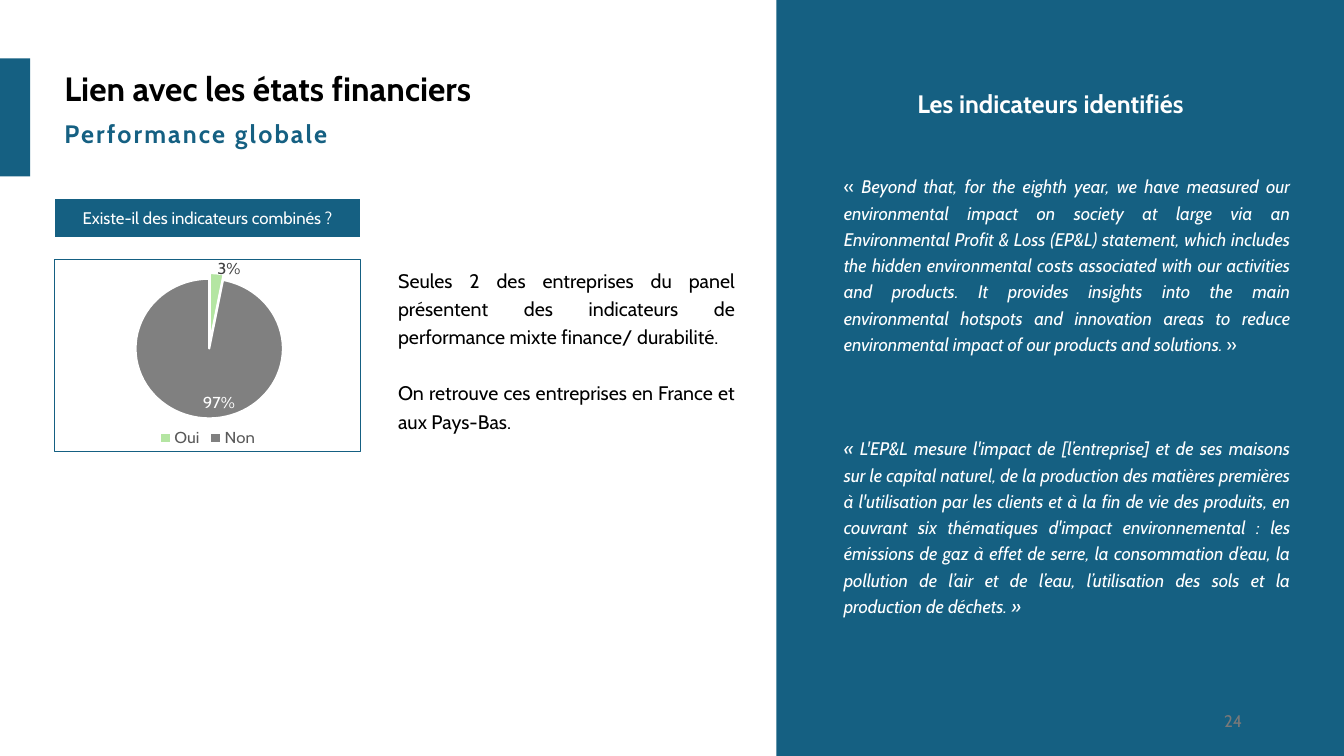
from dataclasses import dataclass

from lxml.etree import SubElement
from pptx import Presentation
from pptx.chart.data import CategoryChartData
from pptx.dml.color import RGBColor
from pptx.enum.chart import XL_CHART_TYPE, XL_LABEL_POSITION, XL_LEGEND_POSITION
from pptx.enum.shapes import MSO_SHAPE
from pptx.enum.text import MSO_ANCHOR, PP_ALIGN
from pptx.oxml import parse_xml
from pptx.oxml.ns import nsdecls, qn
from pptx.util import Inches, Pt


@dataclass(frozen=True)
class Theme:
    font: str = "Cabin"
    blue: str = "156082"
    white: str = "FFFFFF"
    black: str = "000000"
    green: str = "B4E5A2"
    gray: str = "808080"
    page: str = "797979"
    label: str = "404040"
    legend: str = "595959"
    title: int = 24
    head: int = 18
    body: int = 14
    quote: int = 13
    small: int = 12


T = Theme()


def style(font, size, color, bold=False, italic=False):
    font.name = T.font
    font.size = Pt(size)
    font.color.rgb = RGBColor.from_string(color)
    font.bold = bold
    font.italic = italic


def write(frame, text, size=T.body, color=T.black, bold=False, italic=False,
          align=PP_ALIGN.LEFT, anchor=MSO_ANCHOR.TOP, lead=None, gap=0, track=0):
    """Fill a frame; text is a list of paragraphs, each a string or (text, italic) runs."""
    frame.word_wrap = True
    frame.vertical_anchor = anchor
    for i, part in enumerate([text] if isinstance(text, str) else text):
        para = frame.add_paragraph() if i else frame.paragraphs[0]
        para.alignment = align
        if lead:
            para.line_spacing = lead
        if i and gap:
            para.space_before = Pt(gap)
        for words, slant in [(part, italic)] if isinstance(part, str) else part:
            run = para.add_run()
            run.text = words
            style(run.font, size, color, bold, slant)
            if track:
                run.font._element.set("spc", str(track))


def add_text(slide, box, text, **form):
    write(slide.shapes.add_textbox(*map(Inches, box)).text_frame, text, **form)


def add_rect(slide, box, line=None):
    rect = slide.shapes.add_shape(MSO_SHAPE.RECTANGLE, *map(Inches, box))
    rect.shadow.inherit = False
    rect.fill.solid()
    rect.fill.fore_color.rgb = RGBColor.from_string(T.blue)
    if line:
        rect.line.color.rgb = RGBColor.from_string(line)
        rect.line.width = Pt(1.5)
    else:
        rect.line.fill.background()
    return rect


def add_head(slide, x, y):
    # Side tab, title and subtitle
    add_rect(slide, (x, y, 0.3, 1.17))
    add_text(slide, (x + 0.54, y + 0.04, 6.01, 0.5), "Lien avec les états financiers",
             size=T.title, bold=True)
    add_text(slide, (x + 0.54, y + 0.54, 6.8, 0.4), "Performance globale",
             size=T.head, color=T.blue, bold=True, track=150)


def add_pie(slide, box):
    data = CategoryChartData(number_format="0%")
    data.categories = ["Oui", "Non"]
    data.add_series("Series 1", (0.03, 0.97))
    chart = slide.shapes.add_chart(XL_CHART_TYPE.PIE, *map(Inches, box), data).chart
    style(chart.font, 10, T.black)
    chart.has_title = False
    chart.has_legend = True
    chart.legend.position = XL_LEGEND_POSITION.BOTTOM
    chart.legend.include_in_layout = False
    style(chart.legend.font, T.small, T.legend)

    # Slices and their labels
    plot = chart.plots[0]
    plot.vary_by_categories = True
    series = plot.series[0]
    for i, color in enumerate((T.green, T.gray)):
        form = series.points[i].format
        form.fill.solid()
        form.fill.fore_color.rgb = RGBColor.from_string(color)
        form.line.color.rgb = RGBColor.from_string(T.white)
        form.line.width = Pt(1.5)
    labels = series.data_labels
    labels.show_value = True
    labels.show_percentage = False
    labels.number_format = "0%"
    labels.number_format_is_linked = False
    labels.position = XL_LABEL_POSITION.BEST_FIT
    style(labels.font, T.small, T.label)
    major = series.points[1].data_label
    style(major.font, T.small, T.white)
    major.position = XL_LABEL_POSITION.INSIDE_END

    # Pull out the small slice
    root = chart._chartSpace
    shape = root.find(".//" + qn("c:dPt")).find(qn("c:spPr"))
    shape.addprevious(parse_xml(f'<c:explosion {nsdecls("c")} val="8"/>'))

    # Plot placement
    area = root.find(".//" + qn("c:plotArea"))
    for old in area.findall(qn("c:layout")):
        area.remove(old)
    layout = parse_xml(f'<c:layout {nsdecls("c")}><c:manualLayout/></c:layout>')
    rules = (("layoutTarget", "inner"), ("xMode", "edge"), ("yMode", "edge"),
             ("x", 0.22), ("y", 0.1), ("w", 0.57), ("h", 0.73))
    for key, val in rules:
        SubElement(layout[0], qn("c:" + key)).set("val", str(val))
    area.insert(0, layout)

    # Frame around the chart
    root.find(qn("c:txPr")).addprevious(parse_xml(
        f'<c:spPr {nsdecls("c", "a")}><a:noFill/><a:ln w="9525"><a:solidFill>'
        f'<a:srgbClr val="{T.blue}"/></a:solidFill></a:ln></c:spPr>'))


def add_survey(slide, x, y):
    # Question, chart and comment
    ask = add_rect(slide, (x, y, 3.04, 0.4), line=T.white)
    write(ask.text_frame, "Existe-il des indicateurs combinés ?", size=T.small,
          color=T.white, align=PP_ALIGN.CENTER, anchor=MSO_ANCHOR.MIDDLE)
    add_pie(slide, (x, y + 0.51, 3.04, 2.01))
    add_text(slide, (x + 3.31, y + 0.61, 3.54, 1.78), [
        "Seules 2 des entreprises du panel présentent des indicateurs de "
        "performance mixte finance/ durabilité.",
        "On retrouve ces entreprises en France et aux Pays-Bas.",
    ], align=PP_ALIGN.JUSTIFY, lead=1.2, gap=20)


def add_panel(slide, x, y, w, h):
    # Blue panel with heading, two quotes and page number
    add_rect(slide, (x, y, w, h))
    add_text(slide, (x + 1.3, y + 0.83, 3.24, 0.4), "Les indicateurs identifiés",
             size=T.head, color=T.white, bold=True)
    beyond = (
        "Beyond that, for the eighth year, we have measured our environmental "
        "impact on society at large via an Environmental Profit & Loss (EP&L) "
        "statement, which includes the hidden environmental costs associated with "
        "our activities and products. It provides insights into the main "
        "environmental hotspots and innovation areas to reduce environmental "
        "impact of our products and solutions. ")
    impact = (
        "« L'EP&L mesure l'impact de [l’entreprise] et de ses maisons sur le "
        "capital naturel, de la production des matières premières à l'utilisation "
        "par les clients et à la fin de vie des produits, en couvrant six "
        "thématiques d'impact environnemental : les émissions de gaz à effet de "
        "serre, la consommation d’eau, la pollution de l’air et de l’eau, "
        "l’utilisation des sols et la production de déchets. »")
    quotes = ((1.65, [("« ", False), (beyond, True), ("»", False)]),
              (4.25, [(impact, True)]))
    for top, runs in quotes:
        add_text(slide, (x + 0.57, y + top, 4.62, 2.18), [runs], size=T.quote,
                 color=T.white, align=PP_ALIGN.JUSTIFY, lead=1.2)
    add_text(slide, (x + 1.72, y + 6.95, 3, 0.4), "24", size=T.small, color=T.page,
             align=PP_ALIGN.RIGHT, anchor=MSO_ANCHOR.MIDDLE)


def main():
    deck = Presentation()
    deck.slide_width, deck.slide_height = Inches(13.33), Inches(7.5)
    slide = deck.slides.add_slide(deck.slide_layouts[6])
    add_head(slide, 0, 0.58)
    add_panel(slide, 7.7, 0, 5.63, 7.5)
    add_survey(slide, 0.54, 1.96)
    deck.save("out.pptx")


if __name__ == "__main__":
    main()
